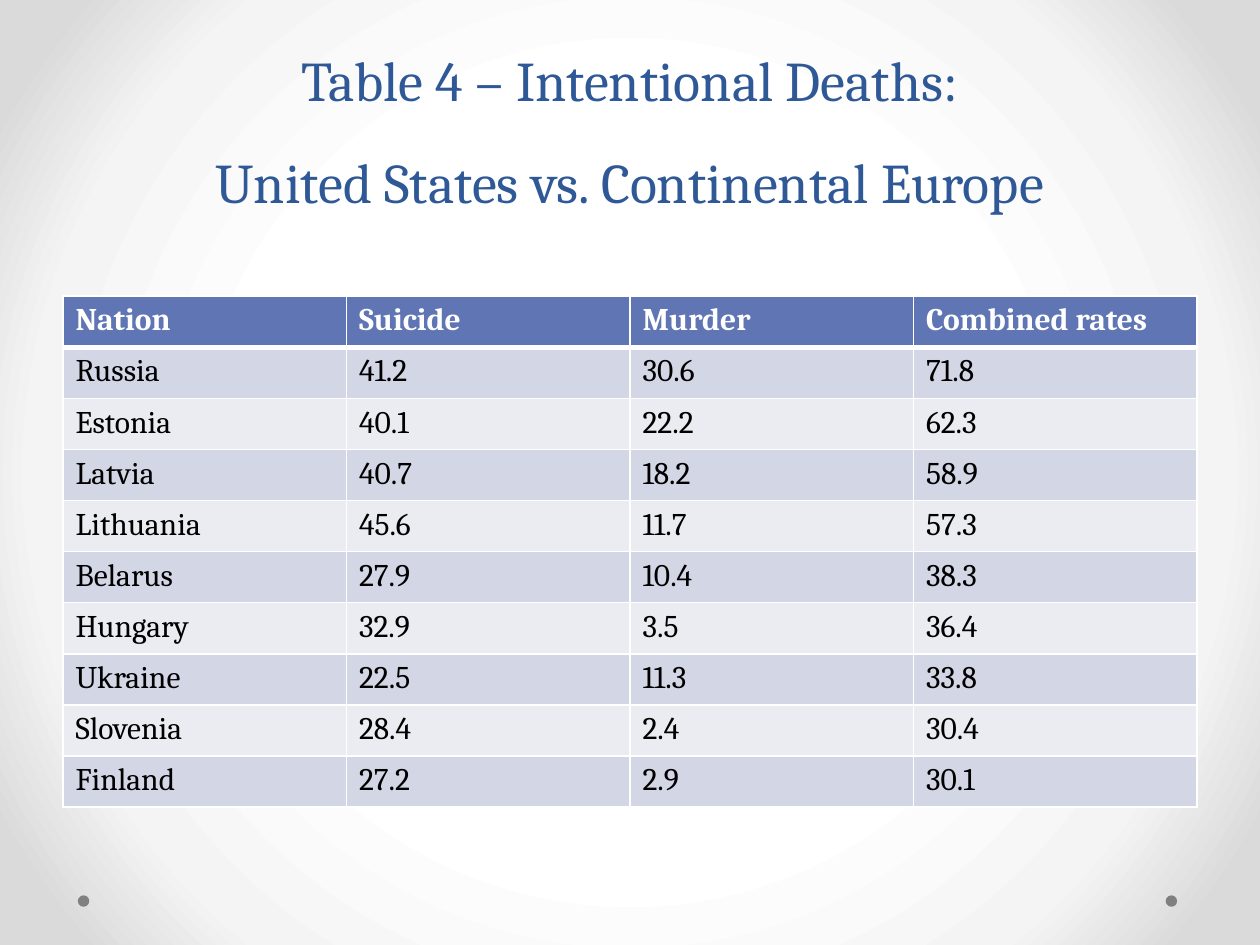
"""Build a slide with a table of intentional death rates by nation."""

from dataclasses import dataclass

import lxml.etree
import pptx
import pptx.dml.color
import pptx.enum.shapes
import pptx.enum.text
import pptx.oxml
import pptx.oxml.ns
import pptx.util
from pptx.dml.color import RGBColor
from pptx.util import Cm

FONT_NAME = "Cambria"
TITLE_BLUE = RGBColor(0x2F, 0x58, 0x97)
HEADER_BLUE = RGBColor(0x60, 0x76, 0xB4)
BAND_DARK = RGBColor(0xD2, 0xD6, 0xE5)
BAND_LIGHT = RGBColor(0xEA, 0xEC, 0xF2)
DOT_GRAY = RGBColor(0x80, 0x80, 0x80)
EDGE_GRAY = RGBColor(0xDA, 0xDA, 0xDA)
PALE_GRAY = RGBColor(0xF4, 0xF4, 0xF4)
WHITE = RGBColor(0xFF, 0xFF, 0xFF)
BLACK = RGBColor(0, 0, 0)

BACKGROUND_STOPS = ((50, WHITE), (76, PALE_GRAY), (92, EDGE_GRAY))
TITLE = "Table 4 – Intentional Deaths:\vUnited States vs. Continental Europe"
HEADINGS = ("Nation", "Suicide", "Murder", "Combined rates")
MARGIN = Cm(1.27)
CONTENT_WIDTH = Cm(22.86)
TABLE_TOP = Cm(5.97)
ROW_HEIGHT = Cm(1.03)
DOT_SIZE = Cm(0.23)
DOT_TOP = Cm(18.05)
DOT_LEFTS = (Cm(23.5), Cm(1.57))


@dataclass(frozen=True)
class NationRates:
    nation: str
    suicide: str
    murder: str
    combined: str

    def cells(self) -> tuple[str, ...]:
        return self.nation, self.suicide, self.murder, self.combined


@dataclass(frozen=True)
class CellStyle:
    fill: RGBColor
    text: RGBColor
    bold: bool
    bottom_width: int


RATES = (
    NationRates("Russia", "41.2", "30.6", "71.8"),
    NationRates("Estonia", "40.1", "22.2", "62.3"),
    NationRates("Latvia", "40.7", "18.2", "58.9"),
    NationRates("Lithuania", "45.6", "11.7", "57.3"),
    NationRates("Belarus", "27.9", "10.4", "38.3"),
    NationRates("Hungary", "32.9", "3.5", "36.4"),
    NationRates("Ukraine", "22.5", "11.3", "33.8"),
    NationRates("Slovenia", "28.4", "2.4", "30.4"),
    NationRates("Finland", "27.2", "2.9", "30.1"),
)
HEADER_STYLE = CellStyle(HEADER_BLUE, WHITE, True, 3)
BAND_STYLES = (
    CellStyle(BAND_DARK, BLACK, False, 1),
    CellStyle(BAND_LIGHT, BLACK, False, 1),
)


def set_background(slide: pptx.slide.Slide) -> None:
    stops = "".join(
        f'<a:gs pos="{position * 1000}"><a:srgbClr val="{color}"/></a:gs>'
        for position, color in BACKGROUND_STOPS
    )
    background = pptx.oxml.parse_xml(
        f'<p:bg {pptx.oxml.ns.nsdecls("p", "a")}><p:bgPr><a:gradFill rotWithShape="1">'
        f'<a:gsLst>{stops}</a:gsLst><a:path path="circle">'
        '<a:fillToRect l="50000" t="50000" r="50000" b="50000"/></a:path>'
        "</a:gradFill><a:effectLst/></p:bgPr></p:bg>"
    )
    slide.element.cSld.insert(0, background)


def add_dot(slide: pptx.slide.Slide, left: int) -> None:
    dot = slide.shapes.add_shape(
        pptx.enum.shapes.MSO_SHAPE.OVAL, left, DOT_TOP, DOT_SIZE, DOT_SIZE
    )
    dot.shadow.inherit = False
    dot.fill.solid()
    dot.fill.fore_color.rgb = DOT_GRAY
    dot.line.fill.background()


def format_runs(
    paragraph: pptx.text.text._Paragraph, size: int, color: RGBColor, bold: bool
) -> None:
    for run in paragraph.runs:
        run.font.name = FONT_NAME
        run.font.size = pptx.util.Pt(size)
        run.font.color.rgb = color
        run.font.bold = bold


def set_title(slide: pptx.slide.Slide) -> None:
    title = slide.shapes.title
    title.left, title.top = MARGIN, 0
    title.width, title.height = CONTENT_WIDTH, Cm(4.45)
    title.text_frame.text = TITLE
    title.text_frame.auto_size = pptx.enum.text.MSO_AUTO_SIZE.NONE
    title.text_frame.vertical_anchor = pptx.enum.text.MSO_ANCHOR.BOTTOM
    paragraph = title.text_frame.paragraphs[0]
    paragraph.alignment = pptx.enum.text.PP_ALIGN.CENTER
    paragraph.line_spacing = pptx.util.Pt(58)
    format_runs(paragraph, 32, TITLE_BLUE, False)


def set_borders(cell: pptx.table._Cell, bottom_width: int) -> None:
    properties = cell._tc.get_or_add_tcPr()
    widths = {"lnL": 1, "lnR": 1, "lnT": 1, "lnB": bottom_width}
    for index, (side, width) in enumerate(widths.items()):
        border = pptx.oxml.parse_xml(
            f'<a:{side} {pptx.oxml.ns.nsdecls("a")} w="{pptx.util.Pt(width)}">'
            f'<a:solidFill><a:srgbClr val="{WHITE}"/></a:solidFill></a:{side}>'
        )
        properties.insert(index, border)


def fill_row(
    table: pptx.table.Table, row: int, texts: tuple[str, ...], style: CellStyle
) -> None:
    table.rows[row].height = ROW_HEIGHT
    for column, text in enumerate(texts):
        cell = table.cell(row, column)
        cell.text_frame.text = text
        format_runs(cell.text_frame.paragraphs[0], 18, style.text, style.bold)
        cell.fill.solid()
        cell.fill.fore_color.rgb = style.fill
        set_borders(cell, style.bottom_width)


def add_rates_table(slide: pptx.slide.Slide) -> None:
    row_count = len(RATES) + 1
    table = slide.shapes.add_table(
        row_count, len(HEADINGS), MARGIN, TABLE_TOP, CONTENT_WIDTH, ROW_HEIGHT * row_count
    ).table
    fill_row(table, 0, HEADINGS, HEADER_STYLE)
    for index, rates in enumerate(RATES):
        fill_row(table, index + 1, rates.cells(), BAND_STYLES[index % 2])
    for row in range(1, 2):
        for cell in table.rows[row].cells:
            top = cell._tc.tcPr.find(pptx.oxml.ns.qn("a:lnT"))
            top.set("w", str(pptx.util.Pt(HEADER_STYLE.bottom_width)))


def main() -> None:
    presentation = pptx.Presentation()
    presentation.slide_width = Cm(25.4)
    presentation.slide_height = Cm(19.05)
    slide = presentation.slides.add_slide(presentation.slide_layouts[5])
    set_background(slide)
    for left in DOT_LEFTS:
        add_dot(slide, left)
    set_title(slide)
    add_rates_table(slide)
    presentation.save("out.pptx")


if __name__ == "__main__":
    main()
